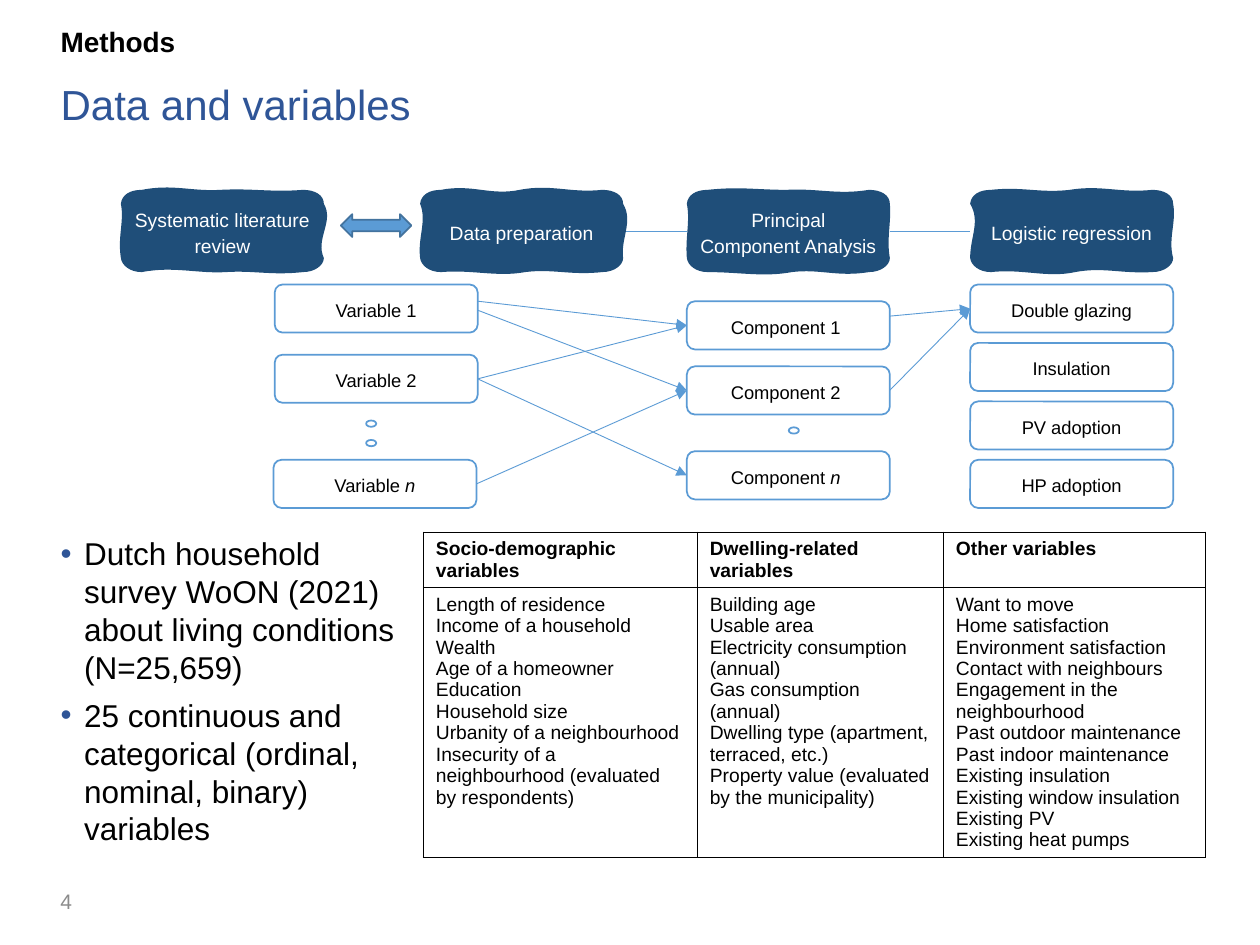
"""Build the data and variables slide with its flow diagram and variable table."""
from dataclasses import dataclass

import pptx
import pptx.dml.color
import pptx.enum.shapes
import pptx.enum.text
import pptx.oxml
import pptx.oxml.ns
import pptx.util
from lxml import etree

Pt = pptx.util.Pt
RGBColor = pptx.dml.color.RGBColor
Shape = pptx.enum.shapes.MSO_SHAPE
Anchor = pptx.enum.text.MSO_ANCHOR
Align = pptx.enum.text.PP_ALIGN
qn = pptx.oxml.ns.qn

BLACK = RGBColor(0x00, 0x00, 0x00)
WHITE = RGBColor(0xFF, 0xFF, 0xFF)
GREY = RGBColor(0x8C, 0x8C, 0x8C)
HEADING = RGBColor(0x2F, 0x55, 0x97)
NAVY = RGBColor(0x1F, 0x4E, 0x79)
BLUE = RGBColor(0x5B, 0x9B, 0xD5)
ARROW_EDGE = RGBColor(0x43, 0x73, 0x9E)

BLOCK_WIDTH, CARD_HEIGHT, BANNER_HEIGHT = 116, 27.5, 47
BANNER_TOP = 108.5
VARIABLE_LEFT, COMPONENT_LEFT, OUTCOME_LEFT = 157, 392.5, 554.4
OUTCOME_TOP, OUTCOME_STEP = 162.6, 33.4


@dataclass
class Banner:
    label: str
    left: float
    top_wave: tuple
    right_wave: tuple
    bottom_wave: tuple
    left_wave: tuple


@dataclass
class Card:
    label: str
    left: float
    top: float
    suffix: str = ""


@dataclass
class Link:
    start: tuple
    end: tuple
    arrow: bool = True


BANNERS = [
    Banner("Systematic literature review", 69.1, (-3.5, 1, -1, 1.5), (6, -5), (2, -1, 1, -3.5), (-2, 2)),
    Banner("Data preparation", 240.1, (-3.5, 3.5, -3.5, 2), (6, -1.5), (2, -2, 3, -1.5), (-1.5, 4)),
    Banner("Principal Component Analysis", COMPONENT_LEFT, (-2, 0, -1, 3), (1, -2), (3, -2, 3, 0), (-1, 2)),
    Banner("Logistic regression", OUTCOME_LEFT, (-2, 2, -3, 2), (2, -3), (1, -3, 3.5, -2), (0, 6)),
]
OUTCOMES = ["Double glazing", "Insulation", "PV adoption", "HP adoption"]
CARDS = [
    Card("Variable 1", VARIABLE_LEFT, OUTCOME_TOP),
    Card("Variable 2", VARIABLE_LEFT, 202.7),
    Card("Variable ", VARIABLE_LEFT - 0.7, 262.8, "n"),
    Card("Component 1 ", COMPONENT_LEFT, 172.2),
    Card("Component 2 ", COMPONENT_LEFT, 209.4),
    Card("Component ", COMPONENT_LEFT, 257.9, "n "),
] + [Card(label, OUTCOME_LEFT, OUTCOME_TOP + row * OUTCOME_STEP) for row, label in enumerate(OUTCOMES)]
FIRST, SECOND, LAST = [(COMPONENT_LEFT, y) for y in (185.9, 223.1, 271.6)]
GLAZING = (OUTCOME_LEFT, 176.4)
LINKS = [
    Link((265, 171.2), FIRST),
    Link((265, 174.2), SECOND),
    Link((273, 216.5), FIRST),
    Link((273, 216.5), LAST),
    Link((272.3, 276.5), SECOND),
    Link((491.8, 182.2), GLAZING),
    Link((508.4, 223.1), GLAZING),
    Link((356, 132.5), (COMPONENT_LEFT, 132.5), False),
    Link((508.4, 132.5), (OUTCOME_LEFT, 132.5), False),
]
DOTS = [(209.2, 240.3), (209.2, 251.4), (450.7, 244.2)]
BULLETS = [
    "Dutch household survey WoON (2021) about living conditions (N=25,659)",
    "25 continuous and categorical (ordinal, nominal, binary) variables",
]
VARIABLES = {
    "Socio-demographic variables": [
        "Length of residence", "Income of a household", "Wealth", "Age of a homeowner", "Education",
        "Household size", "Urbanity of a neighbourhood",
        "Insecurity of a neighbourhood (evaluated by respondents)"],
    "Dwelling-related variables": [
        "Building age", "Usable area", "Electricity consumption (annual)", "Gas consumption (annual)",
        "Dwelling type (apartment, terraced, etc.)", "Property value (evaluated by the municipality)"],
    "Other variables": [
        "Want to move", "Home satisfaction", "Environment satisfaction", "Contact with neighbours",
        "Engagement in the neighbourhood", "Past outdoor maintenance", "Past indoor maintenance",
        "Existing insulation", "Existing window insulation", "Existing PV", "Existing heat pumps"],
}


def style_text(frame, size: float, color: RGBColor, bold=False, align=Align.LEFT, spacing=1.0, after=0) -> None:
    for para in frame.paragraphs:
        para.alignment, para.line_spacing = align, spacing
        para.space_before, para.space_after = Pt(0), Pt(after)
        for span in para.runs:
            span.font.name, span.font.size, span.font.bold = "Arial", Pt(size), bold
            span.font.color.rgb = color


def fill_box(box, bounds: tuple, text: str, anchor=Anchor.TOP):
    box.left, box.top, box.width, box.height = map(Pt, bounds)
    frame = box.text_frame
    frame.text, frame.word_wrap, frame.vertical_anchor = text, True, anchor
    frame.auto_size = pptx.enum.text.MSO_AUTO_SIZE.NONE
    return frame


def add_preset(page, kind, bounds: tuple, fill=WHITE, edge=BLUE):
    shape = page.shapes.add_shape(kind, *map(Pt, bounds))
    shape.shadow.inherit = False
    shape.fill.solid()
    shape.fill.fore_color.rgb = fill
    shape.line.color.rgb, shape.line.width = edge, Pt(1)
    return shape


def add_banner(page, banner: Banner) -> None:
    w, h = BLOCK_WIDTH, BANNER_HEIGHT
    t, r, b, l = banner.top_wave, banner.right_wave, banner.bottom_wave, banner.left_wave
    curves = [
        ((0.5, 3), (5, 0), (12, 0)),
        ((30, t[0]), (40, t[1]), (57, 0)),
        ((75, t[2]), (86, t[3]), (104, 0)),
        ((111, 0), (w, 3), (w, 8)),
        ((w + r[0], 18), (w + r[1], 28), (w, 39)),
        ((w, 43), (111, h), (104, h)),
        ((86, h + b[0]), (76, h + b[1]), (60, h)),
        ((44, h + b[2]), (30, h + b[3]), (12, h)),
        ((5, h), (0.5, 43), (0, 39)),
        ((l[0], 27), (l[1], 18), (0, 8)),
    ]
    ends = [(Pt(banner.left + x), Pt(BANNER_TOP + y)) for *_, (x, y) in curves]
    builder = page.shapes.build_freeform(*ends[-1])
    builder.add_line_segments(ends, close=True)
    shape = builder.convert_to_shape()
    for segment, points in zip(list(shape._element.iter(qn("a:lnTo"))), curves):
        bend = etree.Element(qn("a:cubicBezTo"))
        for x, y in points:
            etree.SubElement(bend, qn("a:pt"), x=str(Pt(x)), y=str(Pt(y)))
        segment.getparent().replace(segment, bend)
    shape.shadow.inherit = False
    shape.fill.solid()
    shape.fill.fore_color.rgb = NAVY
    shape.line.fill.background()
    frame = shape.text_frame
    frame.text, frame.word_wrap, frame.vertical_anchor = banner.label, True, Anchor.MIDDLE
    style_text(frame, 11, WHITE, align=Align.CENTER, spacing=1.15, after=8)


def add_card(page, card: Card) -> None:
    bounds = (card.left, card.top, BLOCK_WIDTH, CARD_HEIGHT)
    frame = fill_box(add_preset(page, Shape.ROUNDED_RECTANGLE, bounds), bounds, card.label, Anchor.MIDDLE)
    if card.suffix:
        span = frame.paragraphs[0].add_run()
        span.text, span.font.italic = card.suffix, True
    style_text(frame, 10.5, BLACK, align=Align.CENTER, spacing=1.15, after=8)


def add_link(page, link: Link) -> None:
    line = page.shapes.add_connector(pptx.enum.shapes.MSO_CONNECTOR.STRAIGHT, *map(Pt, link.start + link.end))
    line.line.color.rgb, line.line.width = BLUE, Pt(0.5)
    properties = line._element.spPr
    if link.arrow:
        etree.SubElement(properties.find(qn("a:ln")), qn("a:tailEnd"), type="triangle")
    etree.SubElement(properties, qn("a:effectLst"))


def add_bullet(para) -> None:
    properties = para._p.get_or_add_pPr()
    properties.set("marL", str(Pt(13.5)))
    properties.set("indent", str(Pt(-13.5)))
    color = etree.SubElement(properties, qn("a:buClr"))
    etree.SubElement(color, qn("a:srgbClr"), val=str(HEADING))
    etree.SubElement(properties, qn("a:buFont"), typeface="Arial")
    etree.SubElement(properties, qn("a:buChar"), char="•")


def fill_cell(cell, text: str, bold: bool) -> None:
    cell.text_frame.text = text
    style_text(cell.text_frame, 11, BLACK, bold)
    properties = cell._tc.get_or_add_tcPr()
    for side in ("a:lnL", "a:lnR", "a:lnT", "a:lnB"):
        border = etree.SubElement(properties, qn(side), w=str(Pt(0.5)))
        etree.SubElement(etree.SubElement(border, qn("a:solidFill")), qn("a:srgbClr"), val=str(BLACK))
    cell.fill.background()


def add_variable_table(page) -> None:
    table = page.shapes.add_table(2, 3, Pt(241.9), Pt(304), Pt(447), Pt(185.6)).table
    for column, width in zip(table.columns, (156.5, 140.7, 149.8)):
        column.width = Pt(width)
    for row, height in zip(table.rows, (31.5, 154.1)):
        row.height = Pt(height)
    for column, (heading, names) in enumerate(VARIABLES.items()):
        fill_cell(table.cell(0, column), heading, True)
        fill_cell(table.cell(1, column), "\n".join(names), False)


def main() -> None:
    deck = pptx.Presentation()
    deck.slide_width, deck.slide_height = Pt(720), Pt(540)
    page = deck.slides.add_slide(deck.slide_layouts[3])
    title, subtitle, points = page.placeholders
    style_text(fill_box(title, (27.4, 12.6, 665, 18), "Methods"), 16, BLACK, True, spacing=0.9)
    frame = fill_box(subtitle, (27.4, 44.6, 665, 53), "Data and variables")
    properties = frame.paragraphs[0]._p.get_or_add_pPr()
    properties.set("marL", "0")
    properties.set("indent", "0")
    etree.SubElement(properties, qn("a:buNone"))
    style_text(frame, 24, HEADING, spacing=0.9)
    frame = fill_box(points, (27.4, 301.7, 216, 199.4), "\n".join(BULLETS))
    for para in frame.paragraphs:
        add_bullet(para)
    style_text(frame, 18, BLACK)
    frame.paragraphs[1].space_before = Pt(6)
    number_bounds = (27.4, 500.4, 162, 28.8)
    number = page.shapes.add_textbox(*map(Pt, number_bounds))
    style_text(fill_box(number, number_bounds, "4", Anchor.MIDDLE), 12, GREY)
    add_variable_table(page)
    for link in LINKS:
        add_link(page, link)
    for banner in BANNERS:
        add_banner(page, banner)
    add_preset(page, Shape.LEFT_RIGHT_ARROW, (194.8, 122.4, 40.3, 13), BLUE, ARROW_EDGE)
    for card in CARDS:
        add_card(page, card)
    for left, top in DOTS:
        add_preset(page, Shape.OVAL, (left, top, 5.8, 3.6))
    deck.save("out.pptx")


if __name__ == "__main__":
    main()
